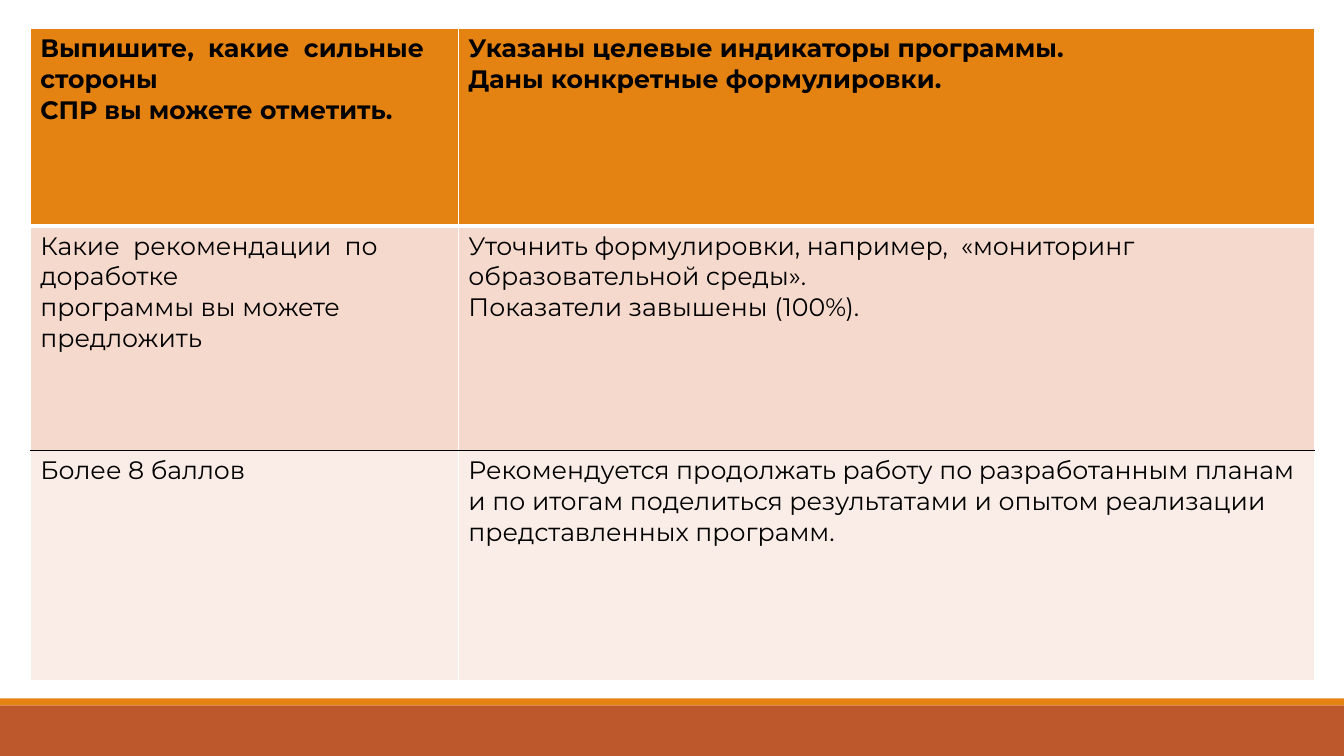
from dataclasses import dataclass

from lxml import etree
from pptx import Presentation
from pptx import util as u
from pptx.dml.color import RGBColor
from pptx.enum import shapes
from pptx.oxml.ns import qn


@dataclass(frozen=True)
class Theme:
    font: str = "Montserrat"
    size: int = 18
    text: str = "000000"
    white: str = "FFFFFF"
    orange: str = "E48312"
    rust: str = "BD582C"
    row_fills: tuple = ("E48312", "F5D9CC", "FAEDE7")
    thin: int = 1
    thick: int = 3


THEME = Theme()
WIDTH, HEIGHT = u.Inches(13.33), u.Inches(7.5)

ROWS = [
    (["Выпишите,  какие  сильные стороны", "СПР вы можете отметить."],
     ["Указаны целевые индикаторы программы.", "Даны конкретные формулировки."]),
    (["Какие  рекомендации  по  доработке", "программы вы можете предложить"],
     ["Уточнить формулировки, например,  «мониторинг образовательной среды».",
      "Показатели завышены (100%)."]),
    (["Более 8 баллов"],
     ["Рекомендуется продолжать работу по разработанным планам и по итогам "
      "поделиться результатами и опытом реализации представленных программ."]),
]
COLUMN_SHARES = (1 / 3, 2 / 3)
ROW_HEIGHTS = (1.96, 2.23, 2.28)

# Horizontal rules from the top edge of the table to the bottom edge
RULES = [
    (THEME.white, THEME.thin),
    (THEME.white, THEME.thick),
    (THEME.text, THEME.thin),
    (THEME.white, THEME.thin),
]


def set_borders(cell, borders):
    """Add the cell's edge lines ahead of its fill, in schema order."""
    properties = cell._tc.get_or_add_tcPr()
    for position, (edge, (color, width)) in enumerate(borders.items()):
        line = etree.Element(qn(f"a:ln{edge}"), w=str(u.Pt(width)))
        fill = etree.SubElement(line, qn("a:solidFill"))
        etree.SubElement(fill, qn("a:srgbClr"), val=color)
        properties.insert(position, line)


def write_cell(cell, lines, bold):
    cell.text_frame.text = "\n".join(lines)
    font_format = {"name": THEME.font, "size": u.Pt(THEME.size), "bold": bold}
    for paragraph in cell.text_frame.paragraphs:
        for run in paragraph.runs:
            for name, value in font_format.items():
                setattr(run.font, name, value)
            run.font.color.rgb = RGBColor.from_string(THEME.text)


def add_footer(slide, left, top, width, height):
    """A thin orange strip above a deep rust band."""
    strip = round(height * 0.12)
    bands = [(THEME.rust, top + strip, height - strip), (THEME.orange, top, strip)]
    for color, band_top, band_height in bands:
        shape = slide.shapes.add_shape(
            shapes.MSO_SHAPE.RECTANGLE, left, band_top, width, band_height)
        shape.shadow.inherit = False
        shape.fill.solid()
        shape.fill.fore_color.rgb = RGBColor.from_string(color)
        shape.line.fill.background()


def add_review_table(slide, left, top, width, height):
    table = slide.shapes.add_table(
        len(ROWS), len(COLUMN_SHARES), left, top, width, height).table
    table.horz_banding = False
    for column, share in zip(table.columns, COLUMN_SHARES):
        column.width = round(width * share)
    for row, row_height in zip(table.rows, ROW_HEIGHTS):
        row.height = round(height * row_height / sum(ROW_HEIGHTS))

    side = (THEME.white, THEME.thin)
    for row_index, row_texts in enumerate(ROWS):
        for column_index, lines in enumerate(row_texts):
            cell = table.cell(row_index, column_index)
            write_cell(cell, lines, bold=row_index == 0)
            cell.fill.solid()
            cell.fill.fore_color.rgb = RGBColor.from_string(THEME.row_fills[row_index])
            set_borders(cell, {"L": side, "R": side,
                               "T": RULES[row_index], "B": RULES[row_index + 1]})


def main():
    presentation = Presentation()
    presentation.slide_width, presentation.slide_height = WIDTH, HEIGHT
    slide = presentation.slides.add_slide(presentation.slide_layouts[6])

    footer_top = u.Inches(6.93)
    add_footer(slide, 0, footer_top, WIDTH, HEIGHT - footer_top)
    add_review_table(slide, u.Inches(0.3), u.Inches(0.28),
                     u.Inches(12.74), u.Inches(sum(ROW_HEIGHTS)))

    presentation.save("out.pptx")


if __name__ == "__main__":
    main()
